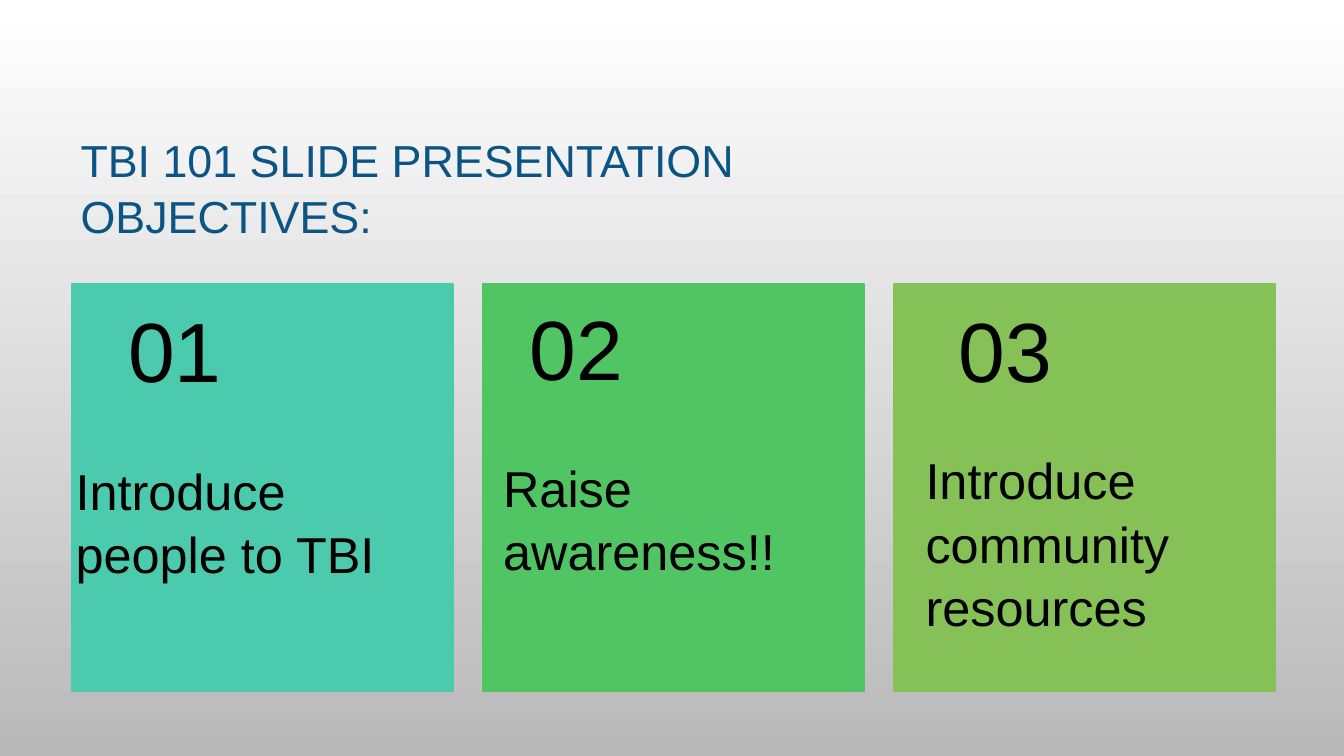
from pptx import Presentation
from pptx.dml.color import RGBColor
from pptx.enum.shapes import MSO_SHAPE
from pptx.enum.text import MSO_ANCHOR
from pptx.util import Inches, Pt

RECTANGLE = MSO_SHAPE.RECTANGLE
TOP = MSO_ANCHOR.TOP
FONT = "Arial"
LINE_SPACING = 1.05
COLORS = {
    "background_top": "FFFFFF",
    "background_bottom": "B9B9B9",
    "title": "0B5484",
    "text": "000000",
    "teal": "4BCAAD",
    "green": "51C564",
    "olive": "86C157",
}
TITLE_LINES = ["TBI 101 SLIDE PRESENTATION", "OBJECTIVES:"]
# Each offset is (left, top) from the card's corner.
OBJECTIVES = [
    {"color": "teal", "number": "01", "text": "Introduce people to TBI",
     "number_offset": (0.49, 0.02), "text_offset": (-0.03, 1.64), "text_width": 3.78},
    {"color": "green", "number": "02", "text": "Raise awareness!!",
     "number_offset": (0.39, 0), "text_offset": (0.13, 1.61), "text_width": 3.5},
    {"color": "olive", "number": "03", "text": "Introduce community resources",
     "number_offset": (0.57, 0.02), "text_offset": (0.24, 1.54), "text_width": 3.33},
]
CARD_LEFT, CARD_TOP = 0.71, 2.82
CARD_WIDTH, CARD_HEIGHT = 3.78, 4.04
CARD_GAP = 0.3


def rgb(name):
    return RGBColor.from_string(COLORS[name])


def paint_background(slide):
    fill = slide.background.fill
    fill.gradient()
    fill.gradient_angle = 270
    for stop, name in zip(fill.gradient_stops, ("background_top", "background_bottom")):
        stop.color.rgb = rgb(name)


def add_text(slide, box, lines, size, color, margins):
    """Write one paragraph per line; margins are (side, top and bottom)."""
    shape = slide.shapes.add_textbox(*map(Inches, box))
    side, end = map(Inches, margins)
    frame_format = {
        "word_wrap": True, "vertical_anchor": TOP,
        "margin_left": side, "margin_right": side,
        "margin_top": end, "margin_bottom": end,
    }
    frame = shape.text_frame
    for name, value in frame_format.items():
        setattr(frame, name, value)
    frame.text = "\n".join(lines)
    for paragraph in frame.paragraphs:
        paragraph.line_spacing = LINE_SPACING
        for name, value in {"name": FONT, "size": Pt(size)}.items():
            setattr(paragraph.font, name, value)
        paragraph.font.color.rgb = rgb(color)


def add_title(slide, box):
    add_text(slide, box, TITLE_LINES, 32, "title", (0.1, 0.05))


def add_card(slide, box, objective):
    card = slide.shapes.add_shape(RECTANGLE, *map(Inches, box))
    card.shadow.inherit = False
    card.fill.solid()
    card.fill.fore_color.rgb = rgb(objective["color"])
    card.line.color.rgb = rgb(objective["color"])
    card.line.width = Pt(1.25)


def add_card_text(slide, box, objective):
    left, top = box[:2]
    margins = (0.07, 0.07)
    x, y = objective["number_offset"]
    add_text(slide, (left + x, top + y, 2.97, 1.2),
             [objective["number"]], 60, "text", margins)
    x, y = objective["text_offset"]
    add_text(slide, (left + x, top + y, objective["text_width"], 1.92),
             [objective["text"]], 36, "text", margins)


def main():
    presentation = Presentation()
    presentation.slide_width = Inches(13.33)
    presentation.slide_height = Inches(7.5)
    slide = presentation.slides.add_slide(presentation.slide_layouts[6])
    paint_background(slide)
    add_title(slide, (0.7, 1.24, 11.12, 1.18))
    for index, objective in enumerate(OBJECTIVES):
        left = CARD_LEFT + index * (CARD_WIDTH + CARD_GAP)
        box = (left, CARD_TOP, CARD_WIDTH, CARD_HEIGHT)
        add_card(slide, box, objective)
        add_card_text(slide, box, objective)
    presentation.save("out.pptx")


if __name__ == "__main__":
    main()
